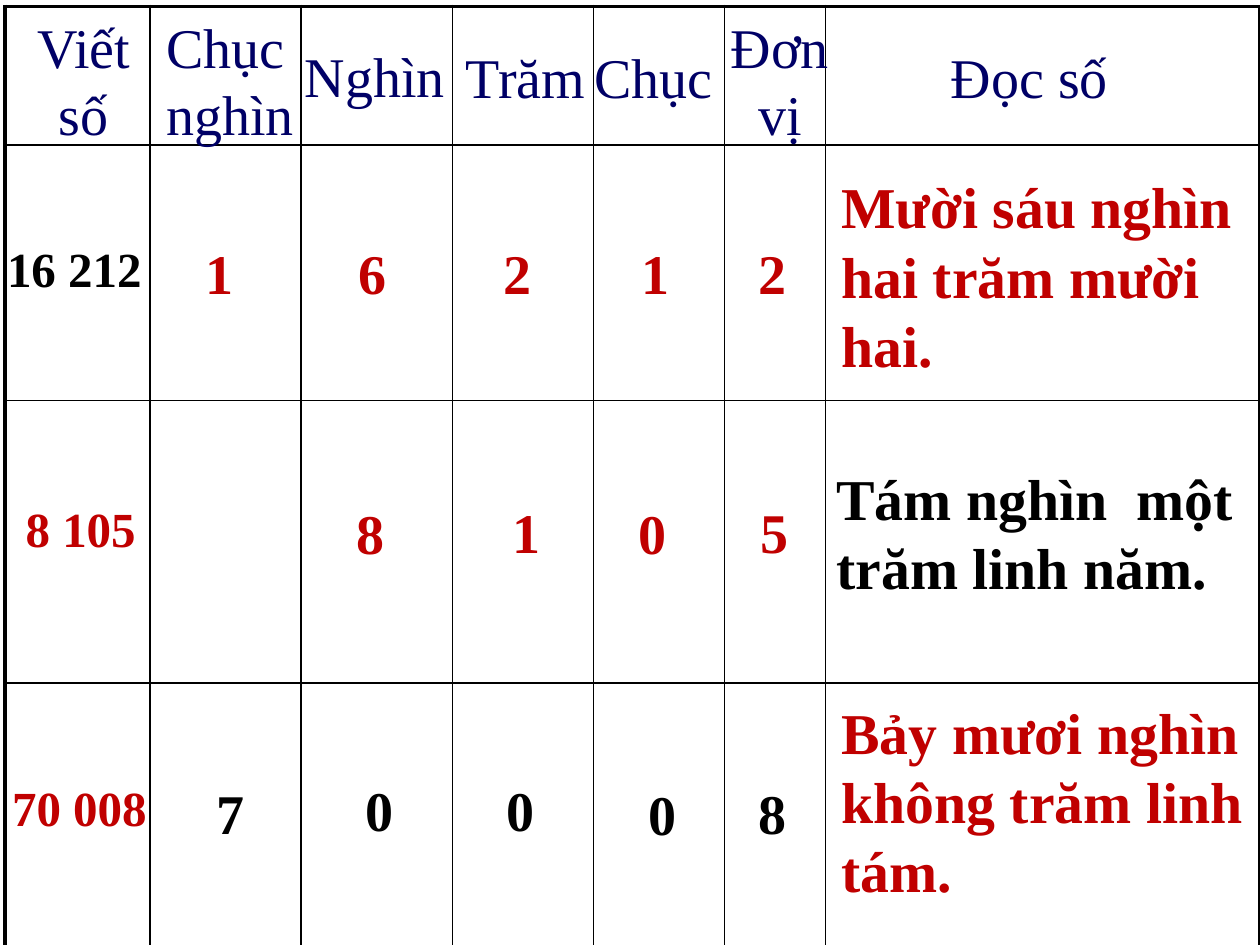
from itertools import accumulate

from lxml import etree
from pptx import Presentation
from pptx.dml.color import RGBColor
from pptx.enum.text import MSO_AUTO_SIZE, PP_ALIGN
from pptx.oxml.ns import qn
from pptx.util import Inches, Pt

LEFT, CENTER = PP_ALIGN.LEFT, PP_ALIGN.CENTER
GROW = MSO_AUTO_SIZE.SHAPE_TO_FIT_TEXT
FONT = "Times New Roman"
COLORS = {"line": "000000", "heading": "000066", "given": "000000", "answer": "C00000"}
THIN, THICK = 1, 2.25

TABLE_LEFT, TABLE_TOP = 0.04, 0.05
COLUMN_WIDTHS = [1.15, 1.2, 1.2, 1.12, 1.04, 0.8, 3.45]
ROW_HEIGHTS = [1.1, 2.03, 2.24, 2.16]
ROW_TOPS = list(accumulate(ROW_HEIGHTS[:-1], initial=TABLE_TOP))

FORMATS = {
    "heading": {"size": Pt(32), "bold": False},
    "number": {"size": Pt(28), "bold": True},
    "digit": {"size": Pt(32), "bold": True},
    "reading": {"size": Pt(33), "bold": True},
}

HEADINGS = [
    ("Viết số", (0, 0, 1.25, 1.18), CENTER),
    ("Chục nghìn", (1.18, 0, 1.25, 1.18), LEFT),
    ("Nghìn", (2.28, 0.23, 1.42, 0.64), LEFT),
    ("Trăm", (3.56, 0.24, 1.17, 0.64), LEFT),
    ("Chục", (4.58, 0.24, 1.17, 0.64), LEFT),
    ("Đơn vị", (5.61, 0, 1.08, 1.18), CENTER),
    ("Đọc số", (7.09, 0.24, 2.08, 0.64), CENTER),
]

NUMBER_ROWS = [
    {
        "number": ("16 212", (-0.24, 0.69, 1.58, 0.57), "given"),
        "digits": [("1", 1.7, 0.69), ("6", 2.92, 0.69), ("2", 4.07, 0.69),
                   ("1", 5.16, 0.69), ("2", 6.09, 0.69)],
        "digit_color": "answer",
        "reading": ("Mười sáu nghìn hai trăm mười hai.",
                    (6.54, 0.16, 3.42, 1.77), "answer"),
    },
    {
        "number": ("8 105", (-0.11, 0.73, 1.42, 0.57), "answer"),
        "digits": [("8", 2.9, 0.73), ("1", 4.14, 0.72),
                   ("0", 5.14, 0.73), ("5", 6.11, 0.72)],
        "digit_color": "answer",
        "reading": ("Tám nghìn  một trăm linh năm.",
                    (6.5, 0.44, 3.42, 1.21), "given"),
    },
    {
        "number": ("70 008", (-0.16, 0.7, 1.5, 0.57), "answer"),
        "digits": [("7", 1.79, 0.71), ("0", 2.97, 0.69), ("0", 4.09, 0.69),
                   ("0", 5.22, 0.72), ("8", 6.09, 0.71)],
        "digit_color": "given",
        "reading": ("Bảy mươi nghìn không trăm linh tám.",
                    (6.54, 0.06, 3.42, 1.77), "answer"),
    },
]


def set_border(cell, side, points):
    """Draw one side of a cell as a solid line."""
    line = etree.SubElement(cell._tc.get_or_add_tcPr(), qn(f"a:{side}"), w=str(Pt(points)))
    fill = etree.SubElement(line, qn("a:solidFill"))
    etree.SubElement(fill, qn("a:srgbClr"), val=COLORS["line"])


def add_grid(slide, left, top):
    """Add the ruled table with a thick outer frame."""
    last_row, last_column = len(ROW_HEIGHTS) - 1, len(COLUMN_WIDTHS) - 1
    grid = slide.shapes.add_table(
        last_row + 1, last_column + 1, Inches(left), Inches(top),
        Inches(sum(COLUMN_WIDTHS)), Inches(sum(ROW_HEIGHTS))).table
    grid.first_row = grid.horz_banding = False
    for column, width in zip(grid.columns, COLUMN_WIDTHS):
        column.width = Inches(width)
    for r, height in enumerate(ROW_HEIGHTS):
        grid.rows[r].height = Inches(height)
        for c in range(last_column + 1):
            cell = grid.cell(r, c)
            outer = {"lnL": c == 0, "lnR": c == last_column,
                     "lnT": r == 0, "lnB": r == last_row}
            for side, is_outer in outer.items():
                set_border(cell, side, THICK if is_outer else THIN)
            cell.fill.background()


def add_label(slide, origin, box, text, style, color, align):
    """Add a wrapped label in a box measured from the origin."""
    left, top, width, height = box
    label = slide.shapes.add_textbox(
        Inches(origin[0] + left), Inches(origin[1] + top), Inches(width), Inches(height))
    frame = label.text_frame
    frame.word_wrap = True
    frame.auto_size = GROW
    paragraph = frame.paragraphs[0]
    paragraph.alignment = align
    run = paragraph.add_run()
    run.text = text
    run.font.name = FONT
    run.font.color.rgb = RGBColor.from_string(COLORS[color])
    for name, value in FORMATS[style].items():
        setattr(run.font, name, value)


def add_header_row(slide, origin):
    """Add the place-value headings."""
    for text, box, align in HEADINGS:
        add_label(slide, origin, box, text, "heading", "heading", align)


def add_number_row(slide, origin, row):
    """Add a number, its digits by place and its reading."""
    for style, align in (("number", CENTER), ("reading", LEFT)):
        text, box, color = row[style]
        add_label(slide, origin, box, text, style, color, align)
    width = 0.83
    for digit, center, top in row["digits"]:
        add_label(slide, origin, (center - width / 2, top, width, 0.64),
                  digit, "digit", row["digit_color"], CENTER)


def main():
    """Build and save the place-value slide."""
    deck = Presentation()
    deck.slide_width, deck.slide_height = Inches(10), Inches(7.5)
    slide = deck.slides.add_slide(deck.slide_layouts[6])
    add_grid(slide, TABLE_LEFT, TABLE_TOP)
    add_header_row(slide, (TABLE_LEFT, TABLE_TOP))
    for top, row in zip(ROW_TOPS[1:], NUMBER_ROWS):
        add_number_row(slide, (TABLE_LEFT, top), row)
    deck.save("out.pptx")


if __name__ == "__main__":
    main()
